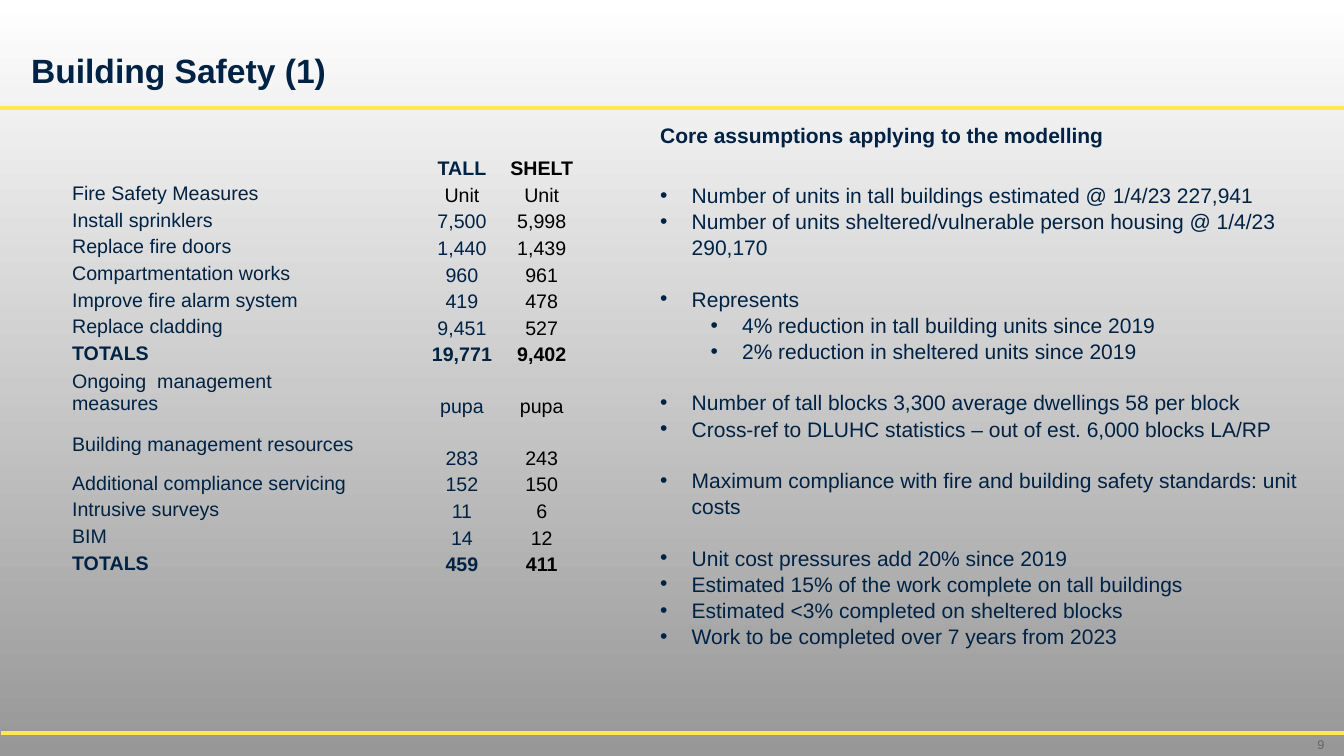
from lxml.etree import SubElement
from pptx import Presentation
from pptx.dml.color import RGBColor
from pptx.enum.shapes import MSO_CONNECTOR as Connector
from pptx.enum.text import MSO_ANCHOR as Anchor, PP_ALIGN as Align
from pptx.oxml.ns import qn
from pptx.util import Pt

PX = 6350
COLORS = {
    "navy": "002244", "black": "000000", "yellow": "FFE850",
    "grey": "666666", "white": "FFFFFF", "shade": "979797",
}
NO_GRID = "{2D5ABB26-0587-4C30-8999-92F81FD0307C}"
COSTS = [
    ("", "TALL", "SHELT"),
    ("Fire Safety Measures", "Unit", "Unit"),
    ("Install sprinklers", "7,500", "5,998"),
    ("Replace fire doors", "1,440", "1,439"),
    ("Compartmentation works", "960", "961"),
    ("Improve fire alarm system", "419", "478"),
    ("Replace cladding", "9,451", "527"),
    ("TOTALS", "19,771", "9,402"),
    ("Ongoing  management measures", "pupa", "pupa"),
    ("Building management resources", "283", "243"),
    ("Additional compliance servicing", "152", "150"),
    ("Intrusive surveys", "11", "6"),
    ("BIM", "14", "12"),
    ("TOTALS", "459", "411"),
]
TALL_ROWS = (8, 9)
ASSUMPTIONS = [
    (0, 24, "Number of units in tall buildings estimated @ 1/4/23 227,941"),
    (0, 0, "Number of units sheltered/vulnerable person housing @ 1/4/23 290,170"),
    (0, 18, "Represents"),
    (1, 0, "4% reduction in tall building units since 2019"),
    (1, 0, "2% reduction in sheltered units since 2019"),
    (0, 18, "Number of tall blocks 3,300 average dwellings 58 per block"),
    (0, 0, "Cross-ref to DLUHC statistics – out of est. 6,000 blocks LA/RP"),
    (0, 18, "Maximum compliance with fire and building safety standards: unit costs"),
    (0, 18, "Unit cost pressures add 20% since 2019"),
    (0, 0, "Estimated 15% of the work complete on tall buildings"),
    (0, 0, "Estimated <3% completed on sheltered blocks"),
    (0, 0, "Work to be completed over 7 years from 2023"),
]


def apply(target, values):
    for name, value in values.items():
        setattr(target, name, value)


class SlideBuilder:
    """Hold the style and the current slide, and draw each kind of element."""

    def __init__(self, deck):
        self.font = "Arial"
        self.page = deck.slides.add_slide(deck.slide_layouts[5])

    def color(self, name):
        return RGBColor.from_string(COLORS[name])

    def background(self, *names):
        fill = self.page.background.fill
        fill.gradient()
        fill.gradient_angle = 270
        for stop, name in zip(fill.gradient_stops, names):
            stop.color.rgb = self.color(name)

    def rule(self, left, right, top):
        line = self.page.shapes.add_connector(
            Connector.STRAIGHT, left * PX, top * PX, right * PX, top * PX)
        line.line.color.rgb = self.color("yellow")
        line.line.width = Pt(3)
        SubElement(line.element.spPr, qn("a:effectLst"))

    def add_text(self, para, text, size, color="navy", bold=False, **layout):
        span = para.add_run()
        span.text = text
        apply(span.font, {"name": self.font, "size": Pt(size), "bold": bold})
        span.font.color.rgb = self.color(color)
        apply(para, layout)

    def place(self, shape, left, top, width, height):
        apply(shape, {"left": left * PX, "top": top * PX,
                      "width": width * PX, "height": height * PX})

    def title(self, text, *bounds):
        title = self.page.shapes.title
        self.place(title, *bounds)
        title.text_frame.vertical_anchor = Anchor.BOTTOM
        self.add_text(title.text_frame.paragraphs[0], text, 24, bold=True,
                      alignment=Align.LEFT, line_spacing=0.9)

    def box(self, *bounds, anchor=Anchor.TOP):
        box = self.page.shapes.add_textbox(*(value * PX for value in bounds))
        apply(box.text_frame, {"word_wrap": True, "vertical_anchor": anchor})
        return box.text_frame

    def bullet(self, frame, level, gap, text):
        para = frame.add_paragraph()
        props = para._p.get_or_add_pPr()
        props.set("marL", str((45 + 72 * level) * PX))
        props.set("indent", str(-45 * PX))
        SubElement(props, qn("a:buFont")).set("typeface", self.font)
        SubElement(props, qn("a:buChar")).set("char", "•")
        self.add_text(para, text, 15, level=level, line_spacing=1.04,
                      space_before=Pt(gap))

    def cell(self, cell, text, **style):
        cell.fill.background()
        apply(cell, {"margin_left": 2 * PX, "margin_right": 2 * PX,
                     "margin_top": 2 * PX, "margin_bottom": 0})
        para = cell.text_frame.paragraphs[0]
        if text:
            self.add_text(para, text, 14, **style)
        SubElement(para._p, qn("a:endParaRPr")).set("sz", "1400")

    def table(self, rows, left, top, widths, heights):
        frame = self.page.shapes.add_table(
            len(rows), len(widths), left * PX, top * PX,
            sum(widths) * PX, sum(heights) * PX)
        table = frame.table
        apply(table, {"first_row": False, "horz_banding": False})
        next(frame.element.iter(qn("a:tableStyleId"))).text = NO_GRID
        for column, width in zip(table.columns, widths):
            column.width = width * PX
        for index, (label, tall, shelt) in enumerate(rows):
            table.rows[index].height = heights[index] * PX
            bold = label in ("", "TOTALS")
            tall_color = "black" if tall == "Unit" else "navy"
            cells = [table.cell(index, column) for column in range(len(widths))]
            self.cell(cells[0], label, bold=bold)
            self.cell(cells[1], "")
            self.cell(cells[2], tall, color=tall_color, bold=bold, alignment=Align.CENTER)
            self.cell(cells[3], shelt, color="black", bold=bold, alignment=Align.CENTER)
            cells[0].vertical_anchor = Anchor.MIDDLE
            for number in cells[2:]:
                number.vertical_anchor = Anchor.BOTTOM


def main():
    deck = Presentation()
    apply(deck, {"slide_width": 1920 * PX, "slide_height": 1080 * PX})
    slide = SlideBuilder(deck)
    slide.background("white", "shade")
    slide.rule(0, 1920, 154)
    slide.rule(1, 1920, 1047)
    slide.title("Building Safety (1)", 30, 65, 1763, 72)

    number = slide.box(1833, 1047, 73, 33, anchor=Anchor.MIDDLE)
    slide.add_text(number.paragraphs[0], "9", 9, color="grey", alignment=Align.RIGHT)

    notes = slide.box(929, 168, 979, 802)
    slide.add_text(notes.paragraphs[0], "Core assumptions applying to the modelling",
                   15, bold=True)
    for level, gap, text in ASSUMPTIONS:
        slide.bullet(notes, level, gap, text)

    heights = [74 if index in TALL_ROWS else 38 for index in range(len(COSTS))]
    slide.table(COSTS, 101, 219, [408, 94, 114, 114], heights)
    deck.save("out.pptx")


if __name__ == "__main__":
    main()
